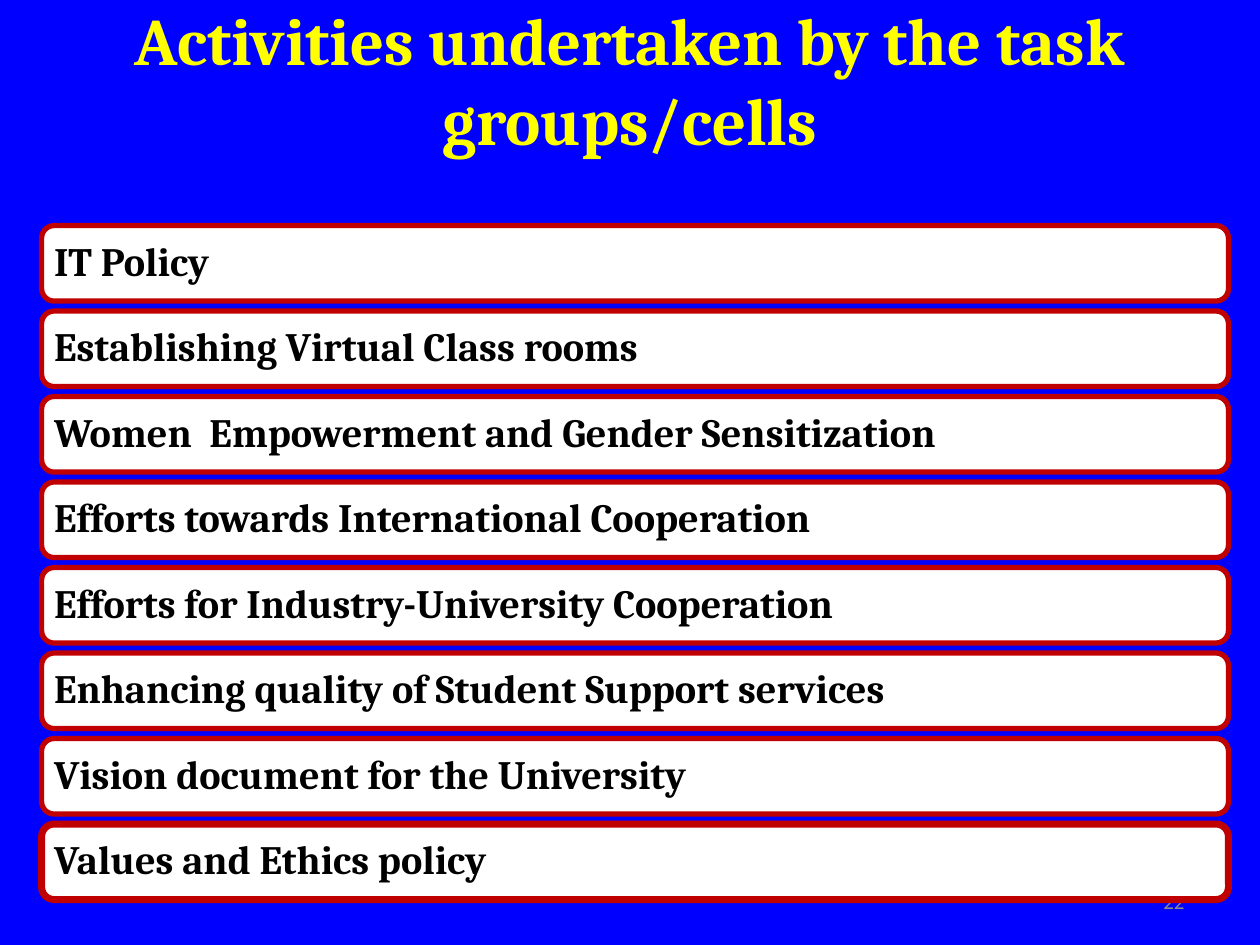
from pptx import Presentation
from pptx.dml.color import RGBColor
from pptx.enum.shapes import MSO_SHAPE
from pptx.enum.text import MSO_ANCHOR, PP_ALIGN
from pptx.util import Inches, Pt

COLORS = {
    "background": "0000FF",
    "title": "FFFF00",
    "bar": "FFFFFF",
    "border": "C00000",
    "text": "000000",
    "number": "8C8C8C",
}
ACTIVITIES = [
    "IT Policy",
    "Establishing Virtual Class rooms",
    "Women  Empowerment and Gender Sensitization",
    "Efforts towards International Cooperation",
    "Efforts for Industry-University Cooperation",
    "Enhancing quality of Student Support services",
    "Vision document for the University",
    "Values and Ethics policy",
]


def color(name):
    return RGBColor.from_string(COLORS[name])


def write_text(shape, text, font_name, size, color_name, alignment, bold=False):
    frame = shape.text_frame
    frame.word_wrap = True
    frame.vertical_anchor = MSO_ANCHOR.MIDDLE
    paragraph = frame.paragraphs[0]
    paragraph.text = text
    paragraph.alignment = alignment
    font = paragraph.font
    font.name, font.size, font.bold = font_name, Pt(size), bold
    font.color.rgb = color(color_name)
    return paragraph


def place_title(slide, left, top, width, height):
    title = slide.shapes.title
    title.left, title.top, title.width, title.height = left, top, width, height
    write_text(title, "Activities undertaken by the task groups/cells",
               "Cambria", 38, "title", PP_ALIGN.CENTER, bold=True)


def add_slide_number(slide, left, top, width, height):
    box = slide.shapes.add_textbox(left, top, width, height)
    write_text(box, "22", "Calibri", 12, "number", PP_ALIGN.RIGHT)


def add_activity_bars(slide, left, top, width, height):
    bar_height = Inches(0.6)
    pitch = (height - bar_height) // (len(ACTIVITIES) - 1)
    for index, activity in enumerate(ACTIVITIES):
        bar = slide.shapes.add_shape(
            MSO_SHAPE.ROUNDED_RECTANGLE, left, top + index * pitch, width, bar_height)
        bar.shadow.inherit = False
        bar.fill.solid()
        bar.fill.fore_color.rgb = color("bar")
        bar.line.color.rgb = color("border")
        # The last bar has a heavier border
        bar.line.width = Pt(4 if activity == ACTIVITIES[-1] else 3)
        bar.text_frame.margin_left = bar.text_frame.margin_right = Inches(0.07)
        paragraph = write_text(bar, activity, "Cambria", 23, "text",
                               PP_ALIGN.LEFT, bold=True)
        paragraph.line_spacing = 0.9


def main():
    presentation = Presentation()
    presentation.slide_width, presentation.slide_height = Inches(10), Inches(7.5)
    slide = presentation.slides.add_slide(presentation.slide_layouts[5])
    slide.background.fill.solid()
    slide.background.fill.fore_color.rgb = color("background")

    place_title(slide, Inches(0.5), Inches(0), Inches(9), Inches(1.25))
    # The bars lie over the slide number
    add_slide_number(slide, Inches(7.17), Inches(6.95), Inches(2.33), Inches(0.4))
    add_activity_bars(slide, Inches(0.33), Inches(1.79), Inches(9.42), Inches(5.35))
    presentation.save("out.pptx")


if __name__ == "__main__":
    main()
